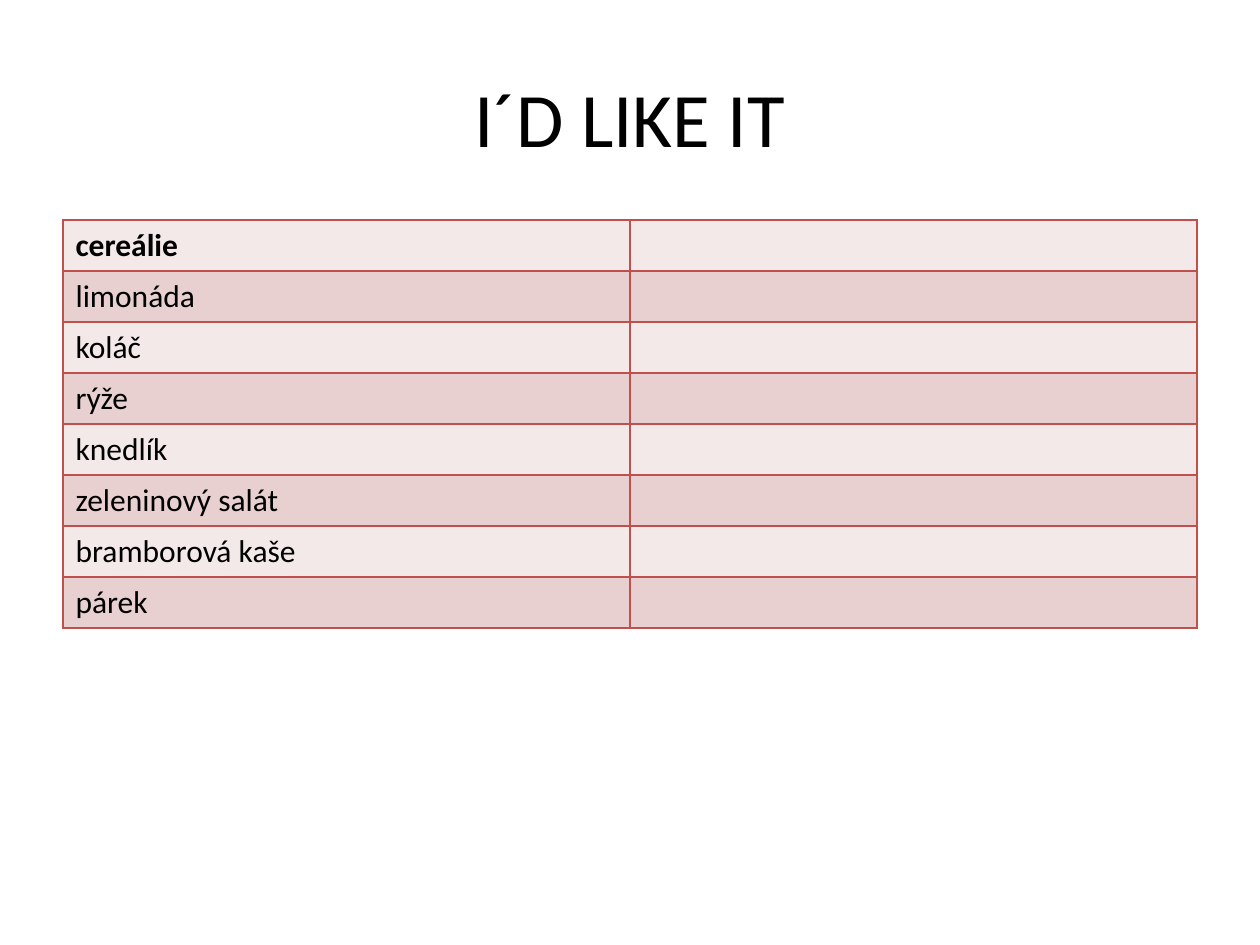
"""Build the "I´D LIKE IT" food vocabulary slide."""
from lxml.etree import SubElement
from pptx import Presentation
from pptx.dml.color import RGBColor
from pptx.enum.text import MSO_ANCHOR, PP_ALIGN
from pptx.oxml.ns import qn
from pptx.util import Emu, Pt


def px(length):
    return Emu(length * 914400 // 126)


def paint(target, color):
    target.solid()
    target.fore_color.rgb = RGBColor.from_string(color)


deck = Presentation()
deck.slide_width, deck.slide_height = px(1260), px(945)
slide = deck.slides.add_slide(deck.slide_layouts[6])
paint(slide.background.fill, "FFFFFF")

heading = slide.shapes.add_textbox(px(63), px(38), px(1134), px(157)).text_frame
heading.word_wrap = True
heading.vertical_anchor = MSO_ANCHOR.MIDDLE
heading_line = heading.paragraphs[0]
heading_line.text = "I´D LIKE IT"
heading_line.alignment = PP_ALIGN.CENTER
heading_line.font.name = "Calibri"
heading_line.font.size = Pt(44)
paint(heading_line.font.fill, "000000")

foods = ["cereálie", "limonáda", "koláč", "rýže", "knedlík",
         "zeleninový salát", "bramborová kaše", "párek"]
row_height = 51
vocabulary = slide.shapes.add_table(
    len(foods), 2, px(63), px(220), px(1134), px(row_height * len(foods))).table

for row, food in enumerate(foods):
    vocabulary.rows[row].height = px(row_height)
    for column, word in enumerate([food, ""]):
        cell = vocabulary.cell(row, column)
        entry = cell.text_frame.paragraphs[0]
        entry.text = word
        entry.font.name = "Calibri"
        entry.font.size = Pt(18)
        entry.font.bold = row == 0
        paint(entry.font.fill, "000000")
        borders = cell._tc.get_or_add_tcPr()
        for edge in ["a:lnL", "a:lnR", "a:lnT", "a:lnB"]:
            line = SubElement(borders, qn(edge), w=str(Pt(1)))
            line_fill = SubElement(line, qn("a:solidFill"))
            SubElement(line_fill, qn("a:srgbClr"), val="C0504D")
        paint(cell.fill, "E8D0D0" if row % 2 else "F4E9E9")

deck.save("out.pptx")
